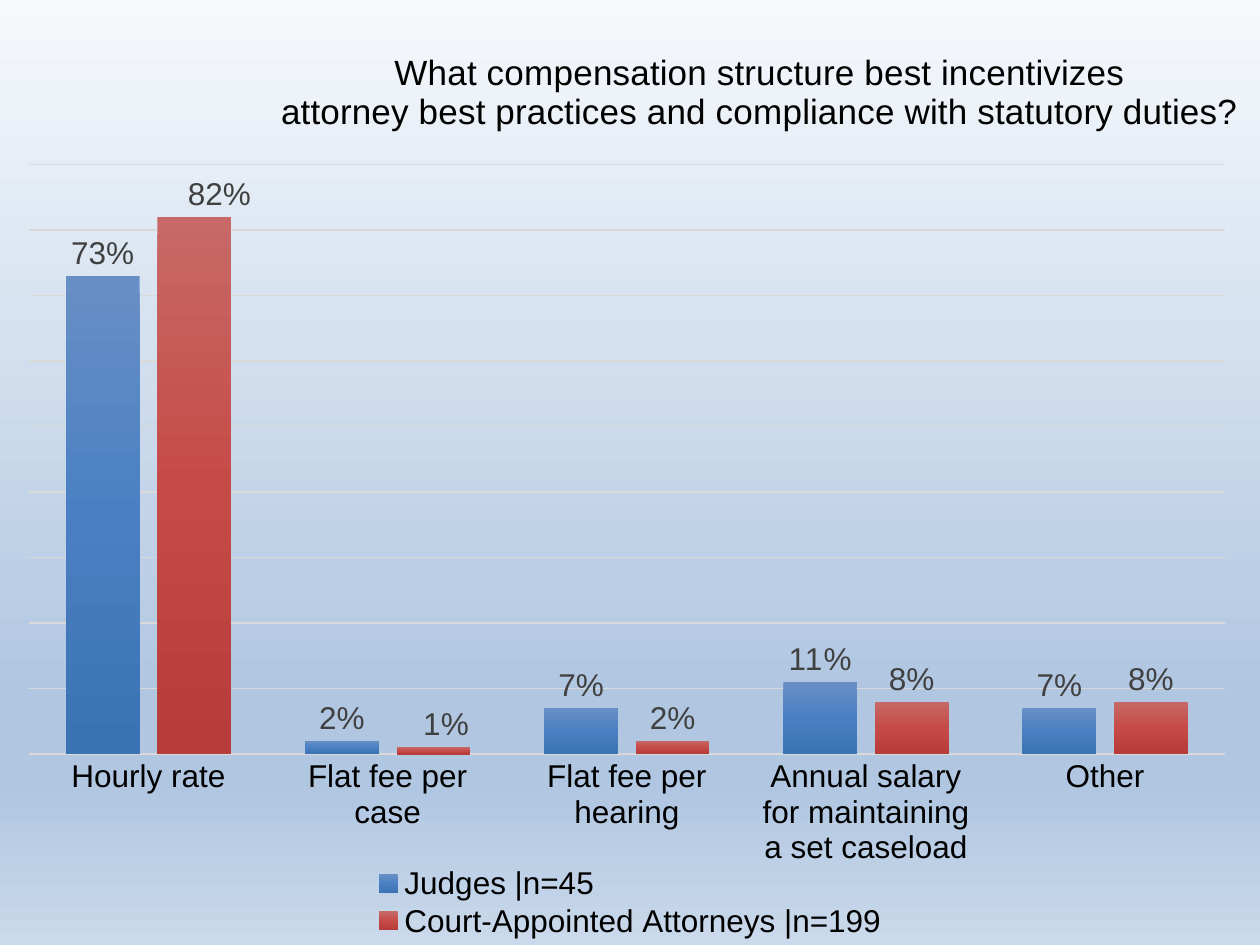
from lxml import etree
from pptx import Presentation
from pptx import util as u
from pptx.chart.data import CategoryChartData
from pptx.dml.color import RGBColor
from pptx.enum import chart as charts, text
from pptx.oxml import ns

BLACK = RGBColor(0x00, 0x00, 0x00)
LABEL_GRAY = RGBColor(0x40, 0x40, 0x40)
RULE_GRAY = RGBColor(0xD9, 0xD9, 0xD9)
PALE = RGBColor(0xF6, 0xF9, 0xFC)
SKY = RGBColor(0xB0, 0xC6, 0xE1)
MIST = RGBColor(0xCA, 0xD9, 0xEB)
BLUES = (RGBColor(0x68, 0x8F, 0xC5), RGBColor(0x4A, 0x80, 0xC3), RGBColor(0x3B, 0x72, 0xB3))
REDS = (RGBColor(0xC7, 0x69, 0x67), RGBColor(0xC6, 0x4B, 0x47), RGBColor(0xB6, 0x3C, 0x39))

TITLE_LINES = (
    "What compensation structure best incentivizes",
    "attorney best practices and compliance with statutory duties?",
)
CATEGORIES = (
    "Hourly rate",
    "Flat fee per case",
    "Flat fee per hearing",
    "Annual salary for maintaining a set caseload",
    "Other",
)
SERIES = (
    ("Judges |n=45", (0.73, 0.02, 0.07, 0.11, 0.07), BLUES, {}),
    ("Court-Appointed Attorneys |n=199", (0.82, 0.01, 0.02, 0.08, 0.08), REDS,
     {0: 0.02, 1: 0.01}),
)


class SurveySlide:
    font_name = "Arial"
    body_size = 18
    title_size = 20

    def __init__(self, deck):
        self.page = deck.slides.add_slide(deck.slide_layouts[6])

    def style(self, font, size, color):
        font.name = self.font_name
        font.size = u.Pt(size)
        font.bold = False
        font.color.rgb = color

    def shade(self, fill, stops):
        fill.gradient()
        fill.gradient_angle = 270
        stop_list = fill._fill._gradFill.find(ns.qn("a:gsLst"))
        for stop in list(stop_list):
            stop_list.remove(stop)
        for percent, color in stops:
            stop = etree.SubElement(stop_list, ns.qn("a:gs"), pos=str(percent * 1000))
            etree.SubElement(stop, ns.qn("a:srgbClr"), val=str(color))

    def place(self, parent, after, **settings):
        for old in parent.findall(ns.qn("c:layout")):
            parent.remove(old)
        layout = etree.Element(ns.qn("c:layout"))
        manual = etree.SubElement(layout, ns.qn("c:manualLayout"))
        for name, value in settings.items():
            etree.SubElement(manual, ns.qn("c:" + name), val=str(value))
        if after:
            parent.find(ns.qn(after)).addnext(layout)
        else:
            parent.insert(0, layout)

    def background(self, stops):
        self.shade(self.page.background.fill, stops)

    def column_chart(self, left, top, width, height):
        data = CategoryChartData(number_format="0%")
        data.categories = CATEGORIES
        for name, values, _, _ in SERIES:
            data.add_series(name, values)
        chart = self.page.shapes.add_chart(
            charts.XL_CHART_TYPE.COLUMN_CLUSTERED,
            u.Inches(left), u.Inches(top), u.Inches(width), u.Inches(height), data,
        ).chart
        self.style(chart.font, 10, BLACK)
        plot = chart.plots[0]
        plot.gap_width = 100
        plot.overlap = -24
        plot.vary_by_categories = False
        self.place(chart._chartSpace.chart.plotArea, None,
                   layoutTarget="inner", xMode="edge", yMode="edge",
                   x=0.023, y=0.174, w=0.949, h=0.624)
        for series, (_, _, colors, shifts) in zip(plot.series, SERIES):
            self.columns(series, colors, shifts)
        self.axes(chart)
        self.title(chart)
        self.legend(chart)

    def columns(self, series, colors, shifts):
        self.shade(series.format.fill, zip((0, 50, 100), colors))
        series.invert_if_negative = False
        labels = series.data_labels
        labels.show_value = True
        labels.number_format = "0%"
        labels.number_format_is_linked = False
        labels.position = charts.XL_LABEL_POSITION.OUTSIDE_END
        self.style(labels.font, self.body_size, LABEL_GRAY)
        for index, shift in shifts.items():
            label = series.points[index].data_label
            self.style(label.font, self.body_size, LABEL_GRAY)
            label.position = charts.XL_LABEL_POSITION.OUTSIDE_END
            self.place(label._get_or_add_dLbl(), "c:idx", x=shift, y=0)

    def axes(self, chart):
        category = chart.category_axis
        category.major_tick_mark = charts.XL_TICK_MARK.NONE
        category.format.line.color.rgb = RULE_GRAY
        category.format.line.width = u.Pt(1)
        self.style(category.tick_labels.font, self.body_size, BLACK)
        value = chart.value_axis
        value.minimum_scale = 0
        value.maximum_scale = 0.9
        value.major_unit = 0.1
        value.major_tick_mark = charts.XL_TICK_MARK.NONE
        value.tick_label_position = charts.XL_TICK_LABEL_POSITION.NONE
        value.format.line.fill.background()
        value.has_major_gridlines = True
        value.major_gridlines.format.line.color.rgb = RULE_GRAY
        value.major_gridlines.format.line.width = u.Pt(0.75)

    def title(self, chart):
        chart.has_title = True
        frame = chart.chart_title.text_frame
        for index, line in enumerate(TITLE_LINES):
            para = frame.add_paragraph() if index else frame.paragraphs[0]
            para.alignment = text.PP_ALIGN.CENTER
            span = para.add_run()
            span.text = line
            self.style(span.font, self.title_size, BLACK)
        self.place(chart.chart_title._element, "c:tx",
                   xMode="edge", yMode="edge", x=0.22, y=0.05)

    def legend(self, chart):
        chart.has_legend = True
        legend = chart.legend
        legend.position = charts.XL_LEGEND_POSITION.BOTTOM
        legend.include_in_layout = False
        self.style(legend.font, self.body_size, BLACK)
        self.place(legend._element, "c:legendPos",
                   xMode="edge", yMode="edge", x=0.29, y=0.915, w=0.42, h=0.08)


def main():
    deck = Presentation()
    deck.slide_width = u.Inches(10)
    deck.slide_height = u.Inches(7.5)
    slide = SurveySlide(deck)
    slide.background(((0, PALE), (74, SKY), (83, SKY), (100, MIST)))
    slide.column_chart(0, 0, 10, 7.5)
    deck.save("out.pptx")


if __name__ == "__main__":
    main()
